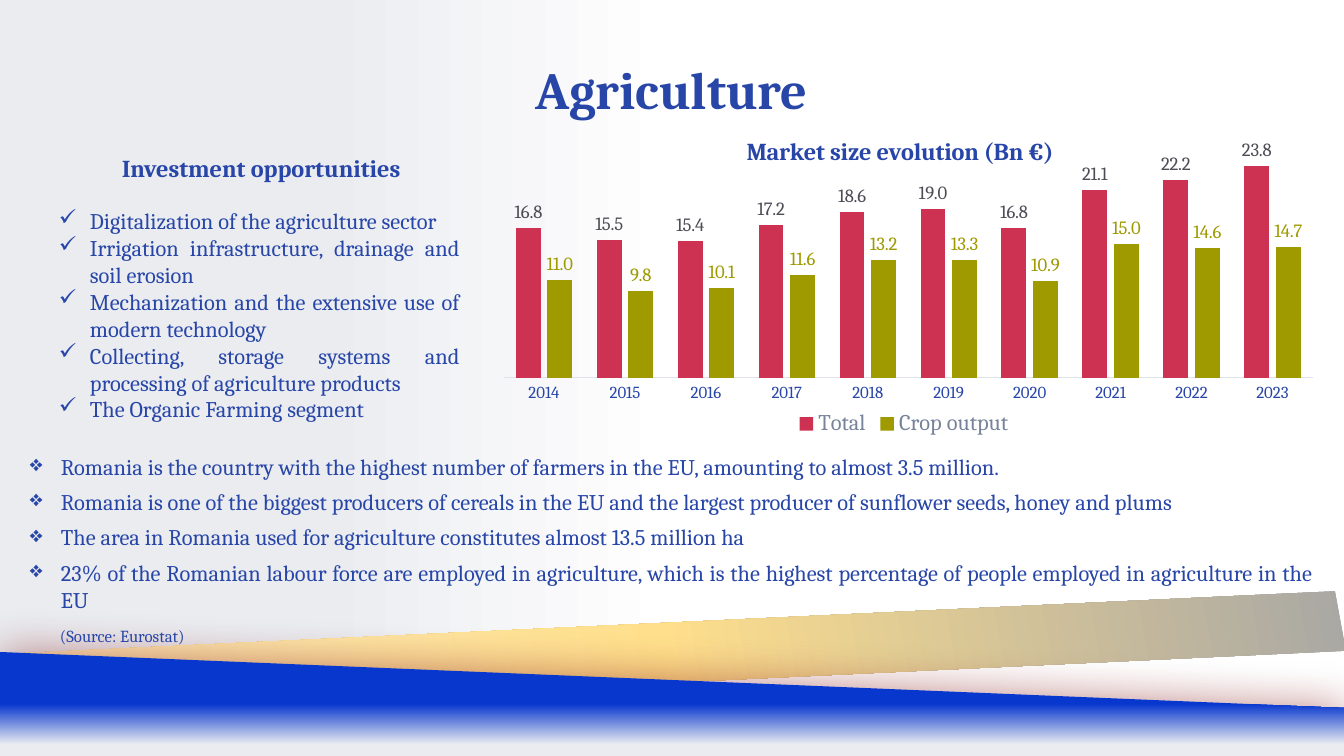
from lxml import etree
from pptx import Presentation
from pptx import util as u
from pptx.chart.data import CategoryChartData
from pptx.dml.color import RGBColor
from pptx.enum import chart as ch, shapes, text
from pptx.oxml import parse_xml
from pptx.oxml.ns import qn

PX = 914400 / 134.4
THEME = {
    "font": "Cambria", "navy": "2846A8", "red": "CE3253", "olive": "9E9A00",
    "label": "4F4C56", "legend": "77839B", "axis": "E0E2E8", "shadow": "7E0808",
    "title": 28, "heading": 13, "body": 12, "value": 10, "small": 9,
    "backdrop": [(0, "FFFFFF"), (50, "FFFFFF"), (76, "EAECF0"), (100, "EAECF0")],
    "ribbon": [(0, "A5A5A5"), (50, "FFDF8C"), (100, "FFEFC4")],
    "wedge": [(0, "0837CE"), (50, "0837CE"), (89, "EAECF0"), (100, "EAECF0")],
}
A_NS = 'xmlns:a="http://schemas.openxmlformats.org/drawingml/2006/main"'


def set_gradient(fill, owner, stops, angle):
    """Give fill, which belongs to owner, the stops at a clockwise angle."""
    fill.gradient()
    old = owner.element.find(".//" + qn("a:gradFill"))
    marks = "".join(f'<a:gs pos="{pos * 1000}"><a:srgbClr val="{color}"/></a:gs>'
                    for pos, color in stops)
    old.getparent().replace(old, parse_xml(
        f'<a:gradFill {A_NS} rotWithShape="1"><a:gsLst>{marks}</a:gsLst>'
        f'<a:lin ang="{angle * 60000}" scaled="0"/></a:gradFill>'))


def style(font, size, color, bold=False):
    font.name = THEME["font"]
    font.size = u.Pt(THEME[size])
    font.color.rgb = RGBColor.from_string(THEME[color])
    font.bold = bold


prs = Presentation()
prs.slide_width, prs.slide_height = int(1344 * PX), int(756 * PX)
slide = prs.slides.add_slide(prs.slide_layouts[6])
set_gradient(slide.background.fill, slide, THEME["backdrop"], 180)

# Decorative ribbon and wedge
ribbon = slide.shapes.add_shape(
    shapes.MSO_SHAPE.PARALLELOGRAM, *(int(n * PX) for n in (542, -19, 242, 1344)))
ribbon.rotation = 79.6
ribbon.adjustments[0] = 0.75
set_gradient(ribbon.fill, ribbon, THEME["ribbon"], 90)

outline = slide.shapes.build_freeform(1344, 756, scale=PX)
outline.add_line_segments([(0, 756), (0, 652), (1344, 708)], close=True)
wedge = outline.convert_to_shape()
set_gradient(wedge.fill, wedge, THEME["wedge"], 90)

for band in (ribbon, wedge):
    band.line.fill.background()
    band.shadow.inherit = False
effects = wedge.element.find(".//" + qn("a:effectLst"))
effects.append(parse_xml(
    f'<a:outerShdw {A_NS} blurRad="{u.Pt(24.8)}" dist="0" dir="0" algn="ctr" rotWithShape="0">'
    f'<a:srgbClr val="{THEME["shadow"]}"><a:alpha val="50000"/></a:srgbClr></a:outerShdw>'))

# Texts: box, anchor, then paragraphs of
# (words, size, bold, alignment, bullet, margin, line spacing, before, after)
CENTER, JUSTIFY = text.PP_ALIGN.CENTER, text.PP_ALIGN.JUSTIFY
TOP, BOTTOM = text.MSO_ANCHOR.TOP, text.MSO_ANCHOR.BOTTOM
opportunities = [
    "Digitalization of the agriculture sector",
    "Irrigation infrastructure, drainage and soil erosion",
    "Mechanization and the extensive use of modern technology",
    "Collecting, storage systems and processing of agriculture products",
    "The Organic Farming segment",
]
facts = [
    "Romania is the country with the highest number of farmers in the EU, "
    "amounting to almost 3.5 million.",
    "Romania is one of the biggest producers of cereals in the EU and the largest "
    "producer of sunflower seeds, honey and plums",
    "The area in Romania used for agriculture constitutes almost 13.5 million ha",
    "23% of the Romanian labour force are employed in agriculture, which is the highest "
    "percentage of people employed in agriculture in the EU",
]
blocks = [
    ((51, 156, 409, 270), TOP,
     [("Investment opportunities", "heading", True, CENTER, None, 11, 0.93, 0, 0)]
     + [(words, "body", False, JUSTIFY, "✓", 39, 1.0, 0 if i else 13, 0)
        for i, words in enumerate(opportunities)]),
    ((30, 453, 1284, 167), TOP,
     [(words, "body", False, JUSTIFY, "❖", 31, 1.0, 0, 4.5) for words in facts]),
    ((60, 628, 558, 19), TOP,
     [("(Source: Eurostat)", "small", False, JUSTIFY, None, 0, 0.93, 0, 0)]),
    ((171, 62, 1001, 58), BOTTOM,
     [("Agriculture", "title", True, CENTER, None, 0, 1.0, 0, 0)]),
]
for box, anchor, paragraphs in blocks:
    frame = slide.shapes.add_textbox(*(int(n * PX) for n in box)).text_frame
    frame.word_wrap = True
    frame.vertical_anchor = anchor
    frame.margin_left = frame.margin_right = frame.margin_top = frame.margin_bottom = 0
    for i, (words, size, bold, align, bullet, margin, spacing, before, after) in enumerate(paragraphs):
        para = frame.add_paragraph() if i else frame.paragraphs[0]
        props = para._p.get_or_add_pPr()
        props.set("marL", str(int(margin * PX)))
        if bullet:
            props.set("indent", str(int(-31 * PX)))
            color = etree.SubElement(props, qn("a:buClr"))
            etree.SubElement(color, qn("a:srgbClr")).set("val", THEME["navy"])
            etree.SubElement(props, qn("a:buChar")).set("char", bullet)
        para.alignment = align
        para.line_spacing = spacing
        if before:
            para.space_before = u.Pt(before)
        para.space_after = u.Pt(after)
        run = para.add_run()
        run.text = words
        style(run.font, size, "navy", bold)

# Market size chart
market = CategoryChartData(number_format="0.0")
market.categories = [str(year) for year in range(2014, 2024)]
market.add_series("Total", [16.8, 15.5, 15.4, 17.2, 18.6, 19.0, 16.8, 21.1, 22.2, 23.8])
market.add_series("Crop output", [11.0, 9.8, 10.1, 11.6, 13.2, 13.3, 10.9, 15.0, 14.6, 14.7])
chart = slide.shapes.add_chart(
    ch.XL_CHART_TYPE.COLUMN_CLUSTERED, *(int(n * PX) for n in (478, 105, 852, 337)), market).chart
style(chart.font, "value", "label")

heading = chart.chart_title.text_frame.paragraphs[0].add_run()
heading.text = "Market size evolution (Bn €)"
style(heading.font, "heading", "navy", True)
chart.has_legend = True
chart.legend.position = ch.XL_LEGEND_POSITION.BOTTOM
chart.legend.include_in_layout = False
style(chart.legend.font, "body", "legend")

years, amounts = chart.category_axis, chart.value_axis
years.major_tick_mark = ch.XL_TICK_MARK.NONE
years.format.line.color.rgb = RGBColor.from_string(THEME["axis"])
years.format.line.width = u.Pt(0.75)
style(years.tick_labels.font, "small", "navy")
amounts.minimum_scale, amounts.maximum_scale = 0, 25
amounts.has_major_gridlines = False
amounts.visible = False

columns = chart.plots[0]
columns.gap_width, columns.overlap = 100, -27
columns.vary_by_categories = False
for series, fill, label in zip(columns.series, ("red", "olive"), ("label", "olive")):
    series.format.fill.solid()
    series.format.fill.fore_color.rgb = RGBColor.from_string(THEME[fill])
    labels = series.data_labels
    labels.show_value = True
    labels.position = ch.XL_LABEL_POSITION.OUTSIDE_END
    labels.number_format = "#,##0.0"
    labels.number_format_is_linked = False
    style(labels.font, "value", label)

# Fixed places of the chart title and the plot area, as shares of the chart
C_NS = 'xmlns:c="http://schemas.openxmlformats.org/drawingml/2006/chart"'
title_part = chart.chart_title._element
plot_part = chart._chartSpace.find(".//" + qn("c:plotArea"))
for part, place, target in (
    (title_part, {"x": 0.31, "y": 0.08}, ""),
    (plot_part, {"x": 0.03, "y": 0.15, "w": 0.95, "h": 0.66}, '<c:layoutTarget val="inner"/>'),
):
    modes = "".join(f'<c:{key}Mode val="edge"/>' for key in "xy")
    shares = "".join(f'<c:{key} val="{value}"/>' for key, value in place.items())
    layout = parse_xml(f"<c:layout {C_NS}><c:manualLayout>{target}{modes}{shares}"
                       "</c:manualLayout></c:layout>")
    for old in part.findall(qn("c:layout")):
        part.remove(old)
    part.insert(1 if part is title_part else 0, layout)

prs.save("out.pptx")
